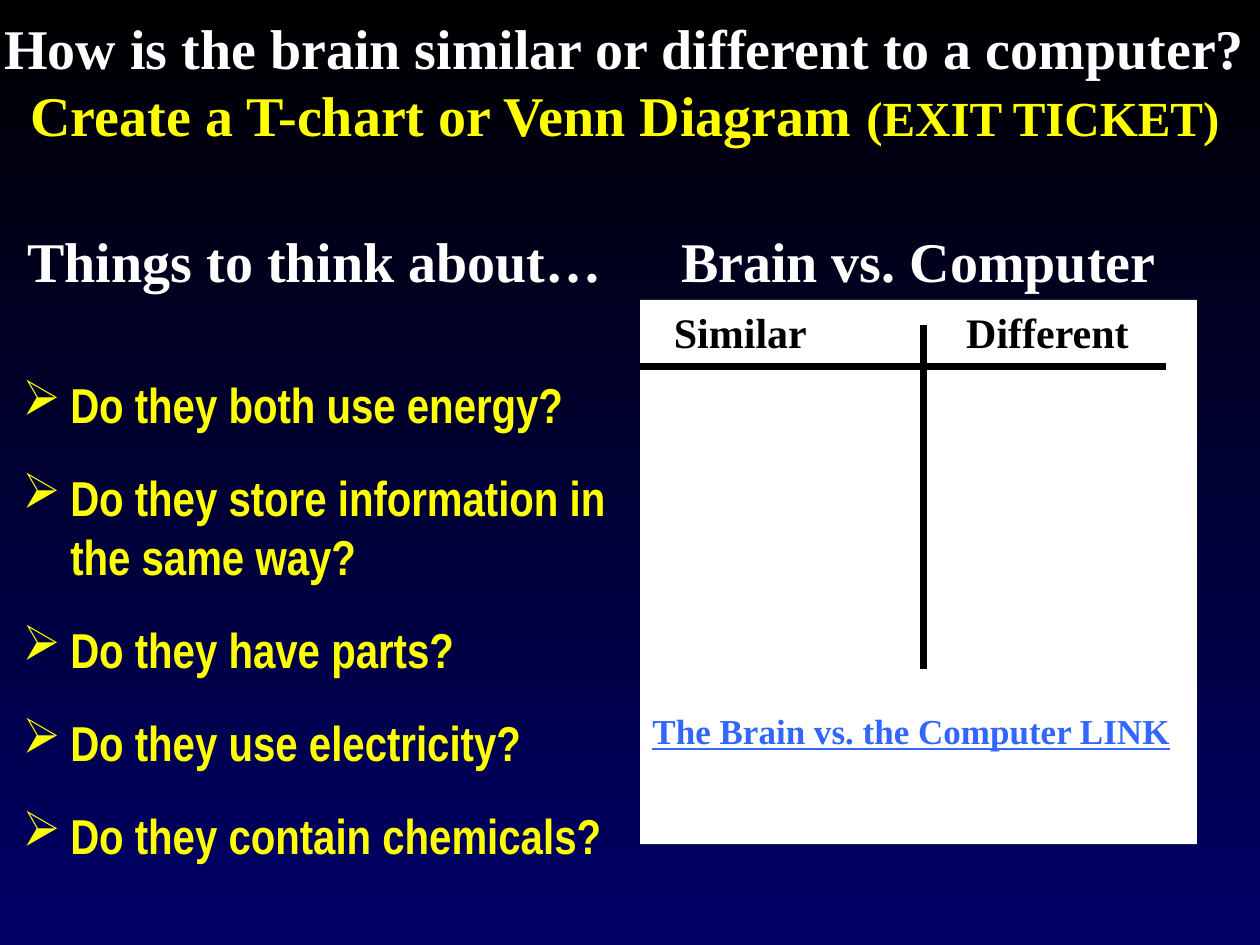
"""Builds a slide that compares the brain with a computer."""
from dataclasses import dataclass

from lxml import etree
from pptx import Presentation
from pptx import util as u
from pptx.dml.color import RGBColor
from pptx.enum import shapes, text
from pptx.oxml.ns import qn


@dataclass(frozen=True)
class Theme:
    serif: str = "Times New Roman"
    narrow: str = "Arial Narrow"
    white: str = "FFFFFF"
    yellow: str = "FFFF00"
    black: str = "000000"
    navy: str = "000066"
    link: str = "3366FF"
    heading: float = 32
    body: float = 28
    column: float = 24
    small: float = 20
    rule: float = 4.25


THEME = Theme()
QUESTIONS = [
    "Do they both use energy?",
    "Do they store information in the same way?",
    "Do they have parts?",
    "Do they use electricity?",
    "Do they contain chemicals?",
]


def add_text(paragraph, words, size=THEME.heading, color=THEME.white,
             font=THEME.serif, underline=None):
    run = paragraph.add_run()
    run.text = words
    run.font.size = u.Pt(size)
    run.font.name = font
    run.font.bold = True
    run.font.underline = underline
    run.font.color.rgb = RGBColor.from_string(color)


def place(shape, left, top, width, height):
    shape.left, shape.top = u.Inches(left), u.Inches(top)
    shape.width, shape.height = u.Inches(width), u.Inches(height)


def set_background(slide):
    fill = slide.background.fill
    fill.gradient()
    fill.gradient_angle = 270
    for stop, color, position in zip(fill.gradient_stops, (THEME.black, THEME.navy), (0, 1)):
        stop.color.rgb = RGBColor.from_string(color)
        stop.position = position


def set_title(slide):
    title = slide.shapes.title
    place(title, -0.08, -0.06, 10.08, 1.4)
    frame = title.text_frame
    frame.word_wrap = True
    frame.auto_size = text.MSO_AUTO_SIZE.NONE
    frame.vertical_anchor = text.MSO_ANCHOR.MIDDLE
    paragraph = frame.paragraphs[0]
    paragraph.alignment = text.PP_ALIGN.CENTER
    add_text(paragraph, "How is the brain similar or different to a computer?")
    paragraph.add_line_break()
    add_text(paragraph, "Create a T-chart or Venn Diagram ", color=THEME.yellow)
    add_text(paragraph, "(EXIT TICKET)", size=THEME.body, color=THEME.yellow)


def add_frame(slide, left, top, width, height):
    box = slide.shapes.add_textbox(*map(u.Inches, (left, top, width, height)))
    box.text_frame.word_wrap = True
    return box.text_frame


def add_heading(slide, words, left, width):
    frame = add_frame(slide, left, 1.68, width, 0.7)
    frame.vertical_anchor = text.MSO_ANCHOR.BOTTOM
    paragraph = frame.paragraphs[0]
    paragraph.alignment = text.PP_ALIGN.CENTER
    add_text(paragraph, words)


def add_bullets(slide, items):
    frame = add_frame(slide, 0.08, 2.92, 4.84, 4.32)
    for index, item in enumerate(items):
        paragraph = frame.add_paragraph() if index else frame.paragraphs[0]
        paragraph.space_before = u.Pt(19.6 if index else 0)
        properties = paragraph._p.get_or_add_pPr()
        properties.set("marL", str(u.Inches(0.38)))
        properties.set("indent", str(-u.Inches(0.38)))
        etree.SubElement(properties, qn("a:buChar"), char="➢")
        add_text(paragraph, item, size=THEME.body, color=THEME.yellow, font=THEME.narrow)


def add_panel(slide, left, top, width, height):
    panel = slide.shapes.add_shape(
        shapes.MSO_SHAPE.RECTANGLE, *map(u.Inches, (left, top, width, height)))
    panel.shadow.inherit = False
    panel.fill.solid()
    panel.fill.fore_color.rgb = RGBColor.from_string(THEME.white)
    panel.line.fill.background()
    frame = panel.text_frame
    frame.word_wrap = True
    frame.vertical_anchor = text.MSO_ANCHOR.TOP
    columns, link = frame.paragraphs[0], frame.add_paragraph()
    columns.alignment = link.alignment = text.PP_ALIGN.LEFT
    tabs = etree.SubElement(columns._p.get_or_add_pPr(), qn("a:tabLst"))
    for position in (0.17, 2.49):
        etree.SubElement(tabs, qn("a:tab"), pos=str(u.Inches(position)), algn="l")
    add_text(columns, "\tSimilar\tDifferent", size=THEME.column, color=THEME.black)
    link.space_before = u.Pt(202)
    add_text(link, "The Brain vs. the Computer LINK", size=THEME.small,
             color=THEME.link, underline=True)


def add_rule(slide, *ends):
    rule = slide.shapes.add_connector(
        shapes.MSO_CONNECTOR.STRAIGHT, *map(u.Inches, ends))
    rule.line.width = u.Pt(THEME.rule)
    rule.line.color.rgb = RGBColor.from_string(THEME.black)
    etree.SubElement(rule._element.spPr, qn("a:effectLst"))


def main():
    presentation = Presentation()
    presentation.slide_width, presentation.slide_height = u.Inches(10), u.Inches(7.5)
    slide = presentation.slides.add_slide(presentation.slide_layouts[5])
    set_background(slide)
    set_title(slide)
    add_heading(slide, "Things to think about…", 0.08, 4.84)
    add_bullets(slide, QUESTIONS)
    add_heading(slide, "Brain vs. Computer", 5.08, 4.42)
    add_panel(slide, 5.08, 2.38, 4.42, 4.32)
    add_rule(slide, 7.33, 2.58, 7.33, 5.31)
    add_rule(slide, 9.25, 2.91, 5.08, 2.91)
    presentation.save("out.pptx")


if __name__ == "__main__":
    main()
